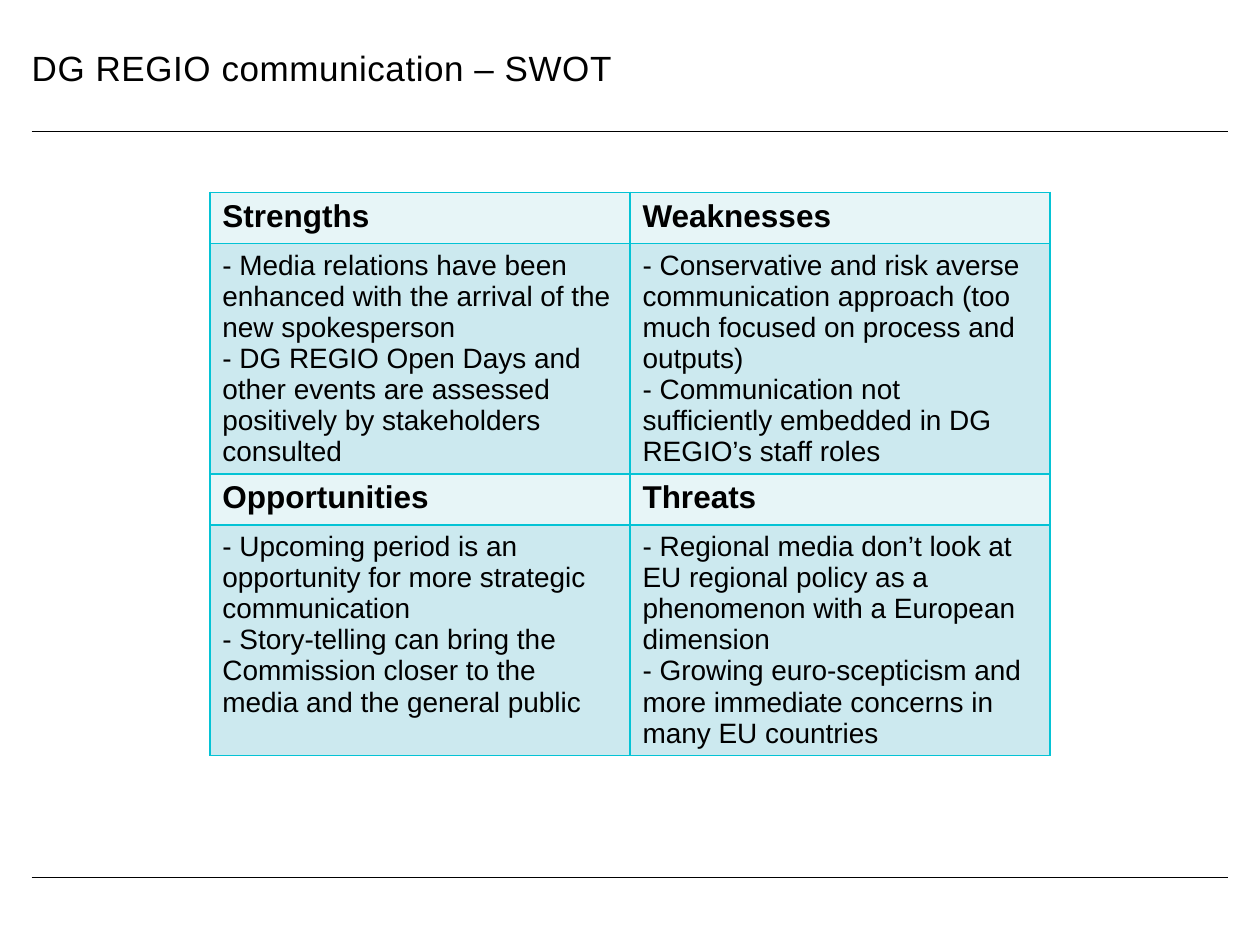
"""Build the DG REGIO communication SWOT slide."""
from lxml.etree import SubElement
from pptx import Presentation
from pptx.dml.color import RGBColor
from pptx.enum.shapes import MSO_CONNECTOR
from pptx.enum.text import MSO_ANCHOR, PP_ALIGN
from pptx.oxml.ns import qn
from pptx.util import Cm, Pt

COLOURS = {"text": "000000", "header": "E7F5F7", "body": "CCE9EF", "border": "04C3D5"}
SWOT = [
    ["Strengths"], ["Weaknesses"],
    ["- Media relations have been enhanced with the arrival of the new spokesperson",
     "- DG REGIO Open Days and other events are assessed positively by stakeholders consulted"],
    ["- Conservative and risk averse communication approach (too much focused on process and outputs)",
     "- Communication not sufficiently embedded in DG REGIO’s staff roles"],
    ["Opportunities"], ["Threats"],
    ["- Upcoming period is an opportunity for more strategic communication",
     "- Story-telling can bring the Commission closer to the media and the general public"],
    ["- Regional media don’t look at EU regional policy as a phenomenon with a European dimension",
     "- Growing euro-scepticism and more immediate concerns in many EU countries"],
]


def write(para, text, size, bold=False, line_spacing=None, tracking=None):
    para.alignment = PP_ALIGN.LEFT
    if line_spacing:
        para.line_spacing = Pt(line_spacing)
    span = para.add_run()
    span.text = text
    span.font.name = "Arial"
    span.font.size = Pt(size)
    span.font.bold = bold
    span.font.color.rgb = RGBColor.from_string(COLOURS["text"])
    if tracking:
        span.font._element.set("spc", str(round(tracking * 100)))


def add_borders(cell):
    properties = cell._tc.get_or_add_tcPr()
    for position, side in enumerate(("lnL", "lnR", "lnT", "lnB")):
        border = SubElement(properties, qn(f"a:{side}"), w=str(Pt(1)))
        properties.insert(position, border)
        fill = SubElement(border, qn("a:solidFill"))
        SubElement(fill, qn("a:srgbClr"), val=COLOURS["border"])


deck = Presentation()
deck.slide_width, deck.slide_height = Cm(25.4), Cm(19.05)
page = deck.slides.add_slide(deck.slide_layouts[5])

for height in (2.64, 17.68):
    rule = page.shapes.add_connector(
        MSO_CONNECTOR.STRAIGHT, Cm(0.64), Cm(height), Cm(24.76), Cm(height))
    rule.line.color.rgb = RGBColor.from_string(COLOURS["text"])
    rule.line.width = Pt(0.1)
    SubElement(rule._element.spPr, qn("a:effectLst"))

title = page.shapes.title
title.left, title.top, title.width, title.height = Cm(0.64), Cm(1.02), Cm(20.7), Cm(1.62)
frame = title.text_frame
frame.word_wrap = True
frame.vertical_anchor = MSO_ANCHOR.TOP
frame.margin_left = frame.margin_right = Cm(0)
frame.margin_top = frame.margin_bottom = Cm(0.1)
write(frame.paragraphs[0], "DG REGIO communication – SWOT", 20, line_spacing=19, tracking=0.3)

table = page.shapes.add_table(4, 2, Cm(4.23), Cm(3.88), Cm(16.94), Cm(11.34)).table
for row, height in zip(table.rows, (1.03, 4.64) * 2):
    row.height = Cm(height)

for index, lines in enumerate(SWOT):
    row, column = divmod(index, 2)
    is_header = row % 2 == 0
    cell = table.cell(row, column)
    cell.fill.solid()
    cell.fill.fore_color.rgb = RGBColor.from_string(COLOURS["header" if is_header else "body"])
    add_borders(cell)
    for number, line in enumerate(lines):
        para = cell.text_frame.add_paragraph() if number else cell.text_frame.paragraphs[0]
        write(para, line, 18 if is_header else 16, bold=is_header)

deck.save("out.pptx")
